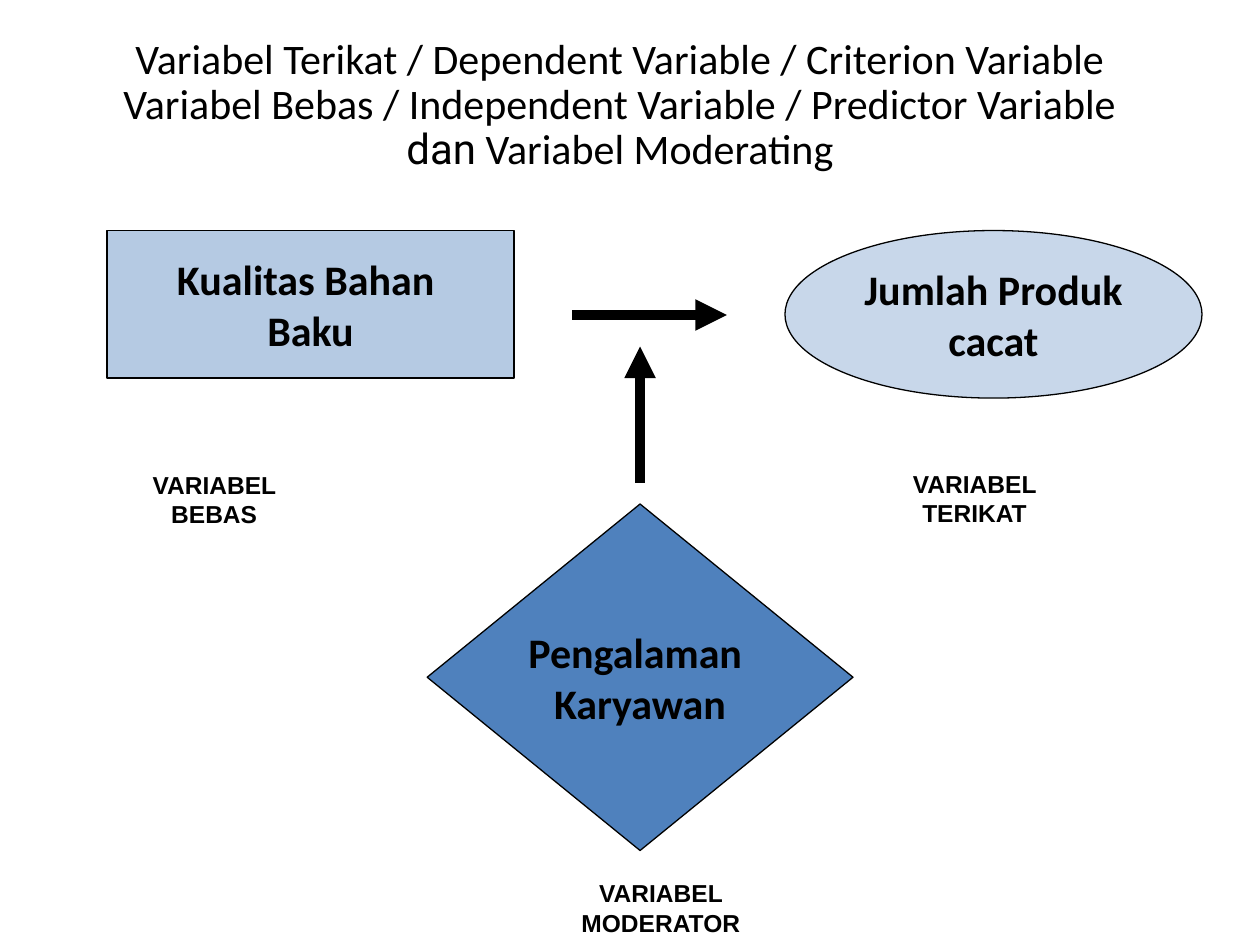
"""Build a slide on dependent, independent and moderating variables."""
from pptx import Presentation
from pptx.dml.color import RGBColor
from pptx.enum.shapes import MSO_CONNECTOR, MSO_SHAPE
from pptx.enum.text import MSO_ANCHOR, MSO_AUTO_SIZE, PP_ALIGN
from pptx.oxml.ns import qn
from pptx.util import Inches, Pt
from lxml.etree import SubElement

BLACK = RGBColor(0x00, 0x00, 0x00)
BLUE = RGBColor(0x4F, 0x81, 0xBD)


def format_text(frame, font_name, size, bold):
    for paragraph in frame.paragraphs:
        paragraph.alignment = PP_ALIGN.CENTER
        for run in paragraph.runs:
            run.font.name = font_name
            run.font.size = Pt(size)
            run.font.bold = bold
            run.font.color.rgb = BLACK


prs = Presentation()
prs.slide_width, prs.slide_height = Inches(10), Inches(7.5)
slide = prs.slides.add_slide(prs.slide_layouts[5])

heading = slide.shapes.title
heading.left, heading.top = Inches(0.42), Inches(0.25)
heading.width, heading.height = Inches(9), Inches(1.92)
heading_frame = heading.text_frame
heading_frame.text = (
    "Variabel Terikat / Dependent Variable / Criterion Variable\n"
    "Variabel Bebas / Independent Variable / Predictor Variable\n"
    "dan"
)
heading_frame.paragraphs[-1].add_run().text = " Variabel Moderating"
heading_frame.vertical_anchor = MSO_ANCHOR.TOP
heading_frame.auto_size = MSO_AUTO_SIZE.NONE
heading_frame.word_wrap = True
format_text(heading_frame, "Calibri", 24, False)
for line in heading_frame.paragraphs:
    line.line_spacing = 0.9
    line.space_before = Pt(0)
heading_frame.paragraphs[-1].runs[0].font.name = "Roboto"

variables = [
    (MSO_SHAPE.RECTANGLE, 0.85, 1.83, 3.23, 1.17, 42, "Kualitas Bahan \nBaku"),
    (MSO_SHAPE.OVAL, 6.23, 1.83, 3.31, 1.33, 31, "Jumlah Produk\ncacat"),
    (MSO_SHAPE.FLOWCHART_DECISION, 3.39, 4, 3.38, 2.75, 100, "Pengalaman \nKaryawan"),
]
for kind, left, top, width, height, opacity, wording in variables:
    variable = slide.shapes.add_shape(
        kind, Inches(left), Inches(top), Inches(width), Inches(height)
    )
    variable.shadow.inherit = False
    variable.fill.solid()
    variable.fill.fore_color.rgb = BLUE
    if opacity < 100:
        color = variable.fill._xPr.find(qn("a:solidFill"))[0]
        SubElement(color, qn("a:alpha"), val=str(opacity * 1000))
    variable.line.color.rgb = BLACK
    variable.line.width = Pt(0.75)
    variable.text_frame.text = wording
    variable.text_frame.word_wrap = False
    variable.text_frame.vertical_anchor = MSO_ANCHOR.MIDDLE
    format_text(variable.text_frame, "Calibri", 24, True)

for start_x, start_y, end_x, end_y in [(4.54, 2.5, 5.77, 2.5), (5.08, 3.83, 5.08, 2.75)]:
    influence = slide.shapes.add_connector(
        MSO_CONNECTOR.STRAIGHT,
        Inches(start_x), Inches(start_y), Inches(end_x), Inches(end_y),
    )
    influence.line.color.rgb = BLACK
    influence.line.width = Pt(6)
    SubElement(influence.line._get_or_add_ln(), qn("a:tailEnd"), type="triangle")
    SubElement(influence._element.spPr, qn("a:effectLst"))

roles = [
    ("VARIABEL BEBAS", 0.81, 3.68, 1.78),
    ("VARIABEL TERIKAT", 6.77, 3.67, 1.93),
    ("VARIABEL MODERATOR", 4.08, 6.92, 2.33),
]
for wording, left, top, width in roles:
    role = slide.shapes.add_textbox(
        Inches(left), Inches(top), Inches(width), Inches(0.33)
    )
    role.text_frame.text = wording
    role.text_frame.word_wrap = True
    format_text(role.text_frame, "Arial", 14, True)

prs.save("out.pptx")
